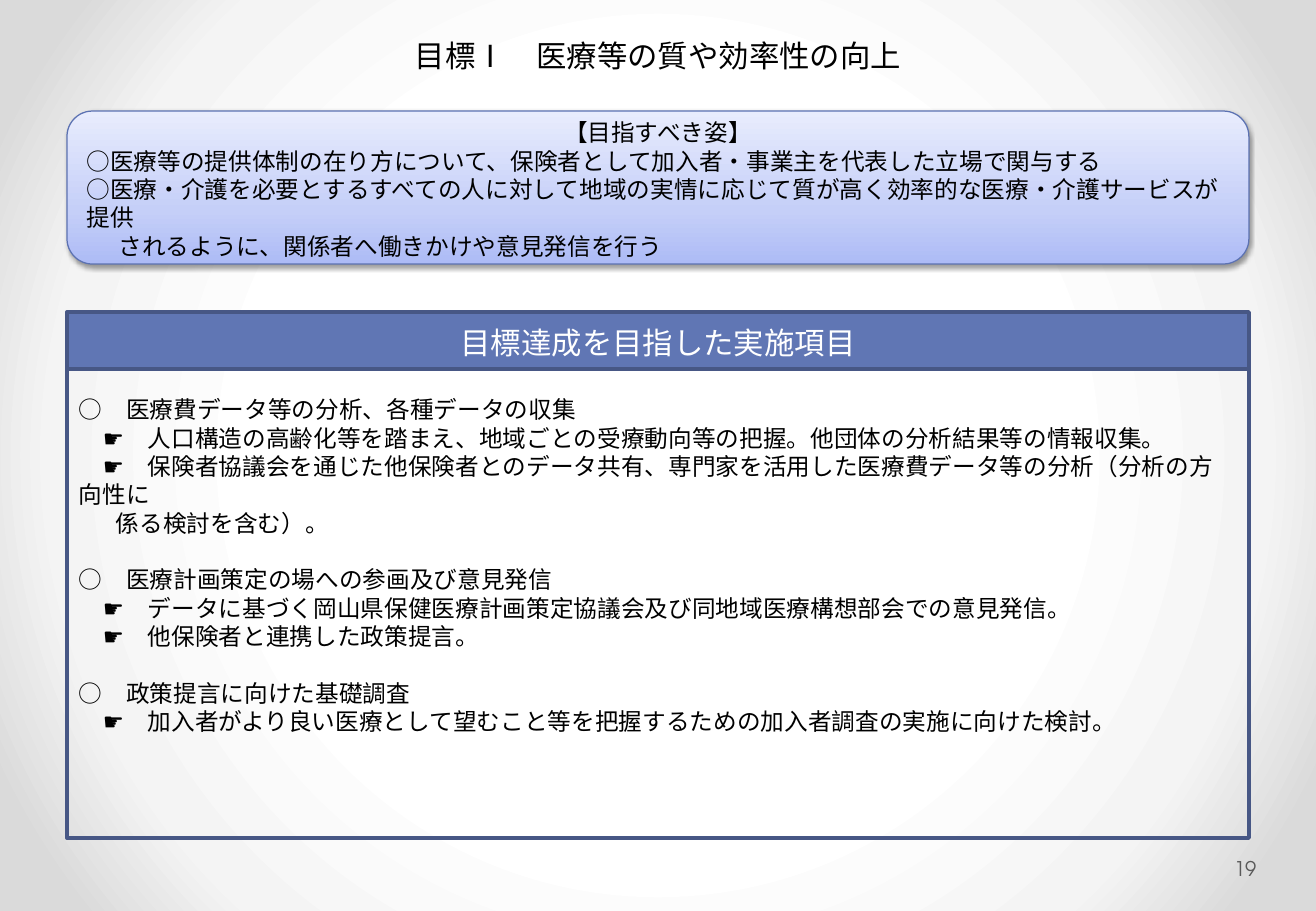
from dataclasses import dataclass, field

from lxml.etree import SubElement
from pptx import Presentation
from pptx.dml.color import RGBColor
from pptx.enum.shapes import MSO_SHAPE
from pptx.enum.text import MSO_ANCHOR, PP_ALIGN
from pptx.oxml import parse_xml
from pptx.oxml.ns import nsdecls, qn
from pptx.util import Pt

EMU_PER_PX = 7526


@dataclass(frozen=True)
class Theme:
    japanese: str = "Noto Sans CJK JP"
    latin: str = "TeX Gyre Adventor"
    black: str = "000000"
    white: str = "FFFFFF"
    grey: str = "595959"
    band: str = "6076B4"
    frame: str = "475785"
    card_line: str = "5C72B2"
    card_stops: tuple = ((0, "ADBBF6"), (35, "C5CFF8"), (100, "E8ECFD"))
    page_stops: tuple = ((50, "FFFFFF"), (76, "F4F4F4"), (92, "DADADA"))
    heading: int = 18
    body: int = 14
    number: int = 12
    leading: float = 1.2


THEME = Theme()


@dataclass(frozen=True)
class Line:
    text: str
    indent: int = 0
    centred: bool = False
    opens_group: bool = False


@dataclass(frozen=True)
class Block:
    left: int
    top: int
    width: int
    height: int
    lines: list[Line]
    shape: MSO_SHAPE | None = None
    fill: str | None = None
    line: str | None = None
    line_width: float = 2.25
    font: str = THEME.japanese
    size: int = THEME.body
    colour: str = THEME.black
    anchor: MSO_ANCHOR = MSO_ANCHOR.MIDDLE
    insets: dict[str, int] = field(
        default_factory=lambda: {"left": 12, "top": 6, "right": 12, "bottom": 3})


def px(length: int) -> int:
    return length * EMU_PER_PX


def set_gradient(owner, stops: tuple, direction: str) -> None:
    """Replace the gradient inside the owner's XML with the given stops."""
    marks = "".join(
        f'<a:gs pos="{percent * 1000}"><a:srgbClr val="{colour}"/></a:gs>'
        for percent, colour in stops)
    gradient = owner.find(".//" + qn("a:gradFill"))
    gradient.getparent().replace(gradient, parse_xml(
        f'<a:gradFill {nsdecls("a")} rotWithShape="1">'
        f"<a:gsLst>{marks}</a:gsLst>{direction}</a:gradFill>"))


def add_soft_shadow(box) -> None:
    effects = box.element.spPr.find(qn("a:effectLst"))
    effects.append(parse_xml(
        f'<a:outerShdw {nsdecls("a")} blurRad="{Pt(3.1)}" dist="{Pt(1.6)}" '
        'dir="5400000" algn="ctr" rotWithShape="0"><a:srgbClr val="000000">'
        '<a:alpha val="38000"/></a:srgbClr></a:outerShdw>'))


def add_line(para, line: Line, block: Block) -> None:
    formats = {
        "alignment": PP_ALIGN.CENTER if line.centred else PP_ALIGN.LEFT,
        "line_spacing": Pt(block.size * THEME.leading),
        "space_before": Pt(block.size * THEME.leading if line.opens_group else 0),
    }
    for name, value in formats.items():
        setattr(para, name, value)
    properties = para._p.get_or_add_pPr()
    properties.set("marL", "0")
    properties.set("indent", str(px(line.indent)))
    span = para.add_run()
    span.text = line.text
    for name, value in {"name": block.font, "size": Pt(block.size)}.items():
        setattr(span.font, name, value)
    span.font.color.rgb = RGBColor.from_string(block.colour)
    SubElement(span.font._element, qn("a:ea"), typeface=block.font)


def add_block(page, block: Block):
    place = [px(n) for n in (block.left, block.top, block.width, block.height)]
    if block.shape is None:
        box = page.shapes.add_textbox(*place)
    else:
        box = page.shapes.add_shape(block.shape, *place)
        box.shadow.inherit = False
        if block.fill:
            box.fill.solid()
            box.fill.fore_color.rgb = RGBColor.from_string(block.fill)
        else:
            box.fill.background()
        box.line.color.rgb = RGBColor.from_string(block.line)
        box.line.width = Pt(block.line_width)
    frame = box.text_frame
    frame.word_wrap = True
    frame.vertical_anchor = block.anchor
    for side, inset in block.insets.items():
        setattr(frame, f"margin_{side}", px(inset))
    for index, line in enumerate(block.lines):
        para = frame.add_paragraph() if index else frame.paragraphs[0]
        add_line(para, line, block)
    return box


def action(text: str) -> Line:
    return Line(f"☛　{text}", indent=24)


TITLE = Block(215, 16, 886, 76, [Line("目標Ⅰ　医療等の質や効率性の向上", centred=True)],
              size=THEME.heading)
VISION = Block(67, 111, 1182, 153, [
    Line("【目指すべき姿】", centred=True),
    Line("○医療等の提供体制の在り方について、保険者として加入者・事業主を代表した立場で関与する"),
    Line("○医療・介護を必要とするすべての人に対して地域の実情に応じて質が高く効率的な"
         "医療・介護サービスが提供"),
    Line("されるように、関係者へ働きかけや意見発信を行う", indent=32),
], shape=MSO_SHAPE.ROUNDED_RECTANGLE, line=THEME.card_line, line_width=0.75)
BAND = Block(67, 312, 1182, 57, [Line("目標達成を目指した実施項目", centred=True)],
             shape=MSO_SHAPE.RECTANGLE, fill=THEME.band, line=THEME.frame,
             size=THEME.heading, colour=THEME.white)
ACTIONS = Block(67, 369, 1182, 469, [
    Line("○　医療費データ等の分析、各種データの収集"),
    action("人口構造の高齢化等を踏まえ、地域ごとの受療動向等の把握。他団体の分析結果等の情報収集。"),
    action("保険者協議会を通じた他保険者とのデータ共有、専門家を活用した医療費データ等の分析"
           "（分析の方向性に"),
    Line("係る検討を含む）。", indent=37),
    Line("○　医療計画策定の場への参画及び意見発信", opens_group=True),
    action("データに基づく岡山県保健医療計画策定協議会及び同地域医療構想部会での意見発信。"),
    action("他保険者と連携した政策提言。"),
    Line("○　政策提言に向けた基礎調査", opens_group=True),
    action("加入者がより良い医療として望むこと等を把握するための加入者調査の実施に向けた検討。"),
], shape=MSO_SHAPE.RECTANGLE, line=THEME.frame, anchor=MSO_ANCHOR.TOP,
    insets={"left": 12, "top": 26, "right": 20, "bottom": 6})
PAGE_NUMBER = Block(1230, 844, 81, 49, [Line("19")], font=THEME.latin,
                    size=THEME.number, colour=THEME.grey,
                    insets={"left": 4, "top": 6, "right": 6, "bottom": 6})


def main() -> None:
    deck = Presentation()
    deck.slide_width, deck.slide_height = px(1316), px(911)
    page = deck.slides.add_slide(deck.slide_layouts[6])
    page.background.fill.gradient()
    set_gradient(page.element, THEME.page_stops,
                 '<a:path path="circle"><a:fillToRect l="50000" t="50000" '
                 'r="50000" b="50000"/></a:path>')
    add_block(page, TITLE)
    card = add_block(page, VISION)
    card.fill.gradient()
    set_gradient(card.element, THEME.card_stops, '<a:lin ang="16200000" scaled="0"/>')
    add_soft_shadow(card)
    for block in (BAND, ACTIONS, PAGE_NUMBER):
        add_block(page, block)
    deck.save("out.pptx")


if __name__ == "__main__":
    main()
